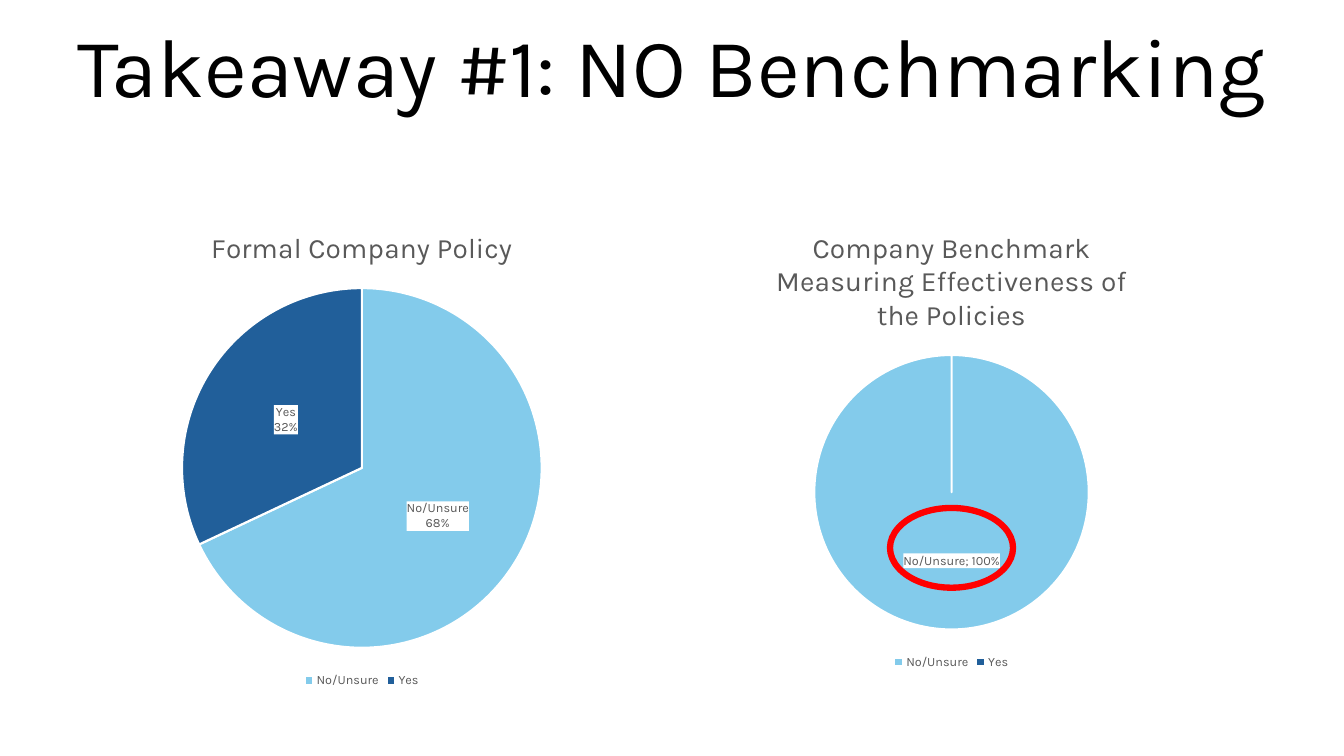
from lxml.etree import SubElement
from pptx import Presentation
from pptx.chart.data import CategoryChartData
from pptx.dml.color import RGBColor
from pptx.enum.chart import XL_CHART_TYPE, XL_LABEL_POSITION, XL_LEGEND_POSITION
from pptx.enum.shapes import MSO_SHAPE
from pptx.enum.text import MSO_ANCHOR, PP_ALIGN
from pptx.oxml import parse_xml
from pptx.oxml.ns import nsdecls, qn
from pptx.util import Cm, Pt

GREY = "595959"
SLICES = {"No/Unsure": "83CBEB", "Yes": "215F9A"}


def color(code):
    return RGBColor.from_string(code)


def style(font, size, code=GREY):
    font.name = "Karla"
    font.size = Pt(size)
    font.bold = False
    font.color.rgb = color(code)


def write(frame, text, size, code=GREY, space=None):
    frame.text = text
    para = frame.paragraphs[0]
    para.alignment = PP_ALIGN.CENTER
    para.line_spacing = space
    style(para.runs[0].font, size, code)


def head(slide, box, text):
    title = slide.shapes.title
    title.left, title.top, title.width, title.height = map(Cm, box)
    title.text_frame.word_wrap = True
    title.text_frame.vertical_anchor = MSO_ANCHOR.MIDDLE
    write(title.text_frame, text, size=59.4, code="000000", space=0.9)


def label(series, values, gap):
    labels = series.data_labels
    labels.number_format = "0%"
    labels.number_format_is_linked = False
    style(labels.font, 9)
    labels.position = XL_LABEL_POSITION.CENTER
    labels.show_category_name = True
    labels.show_percentage = True
    labels.show_value = False
    node = labels._element
    fill = parse_xml(
        f'<c:spPr {nsdecls("c", "a")}><a:solidFill><a:srgbClr val="FFFFFF"/>'
        "</a:solidFill></c:spPr>"
    )
    node.find(qn("c:txPr")).addprevious(fill)
    mark = parse_xml(f'<c:separator {nsdecls("c")}/>')
    mark.text = gap
    node.find(qn("c:showBubbleSize")).addnext(mark)
    for index, value in enumerate(values):
        if not value:
            item = parse_xml(f'<c:dLbl {nsdecls("c")}/>')
            SubElement(item, qn("c:idx")).set("val", str(index))
            SubElement(item, qn("c:delete")).set("val", "1")
            node.insert(0, item)


def pie(slide, box, text, values, gap):
    data = CategoryChartData()
    data.categories = list(SLICES)
    data.add_series("Series 1", values)
    chart = slide.shapes.add_chart(XL_CHART_TYPE.PIE, *map(Cm, box), data).chart
    style(chart.font, 10, "000000")
    chart.has_title = True
    write(chart.chart_title.text_frame, text, size=20)
    chart.has_legend = True
    chart.legend.position = XL_LEGEND_POSITION.BOTTOM
    chart.legend.include_in_layout = False
    style(chart.legend.font, 9)
    plot = chart.plots[0]
    plot.vary_by_categories = True
    series = plot.series[0]
    for index, code in enumerate(SLICES.values()):
        form = series.points[index].format
        form.fill.solid()
        form.fill.fore_color.rgb = color(code)
        form.line.color.rgb = color("FFFFFF")
        form.line.width = Pt(1.5)
    label(series, values, gap)


def ring(slide, box):
    left, top, width, _ = box
    wide, high = 3.1, 2.01
    spot = (left + (width - wide) / 2, top + 7.54, wide, high)
    oval = slide.shapes.add_shape(MSO_SHAPE.OVAL, *map(Cm, spot))
    oval.shadow.inherit = False
    oval.fill.background()
    oval.line.color.rgb = color("FF0000")
    oval.line.width = Pt(4.5)


def main():
    deck = Presentation()
    deck.slide_width, deck.slide_height = Cm(33.87), Cm(19.05)
    slide = deck.slides.add_slide(deck.slide_layouts[5])
    head(slide, (1.5, 0.48, 30.86, 2.62), "Takeaway #1: NO Benchmarking")
    pie(slide, (1.5, 5.26, 15.24, 12.17), "Formal Company Policy", (68, 32), "\n")
    right = (17.58, 5.26, 12.8, 11.71)
    pie(
        slide,
        right,
        "Company Benchmark Measuring Effectiveness of the Policies",
        (100, 0),
        "; ",
    )
    ring(slide, right)
    deck.save("out.pptx")


if __name__ == "__main__":
    main()
